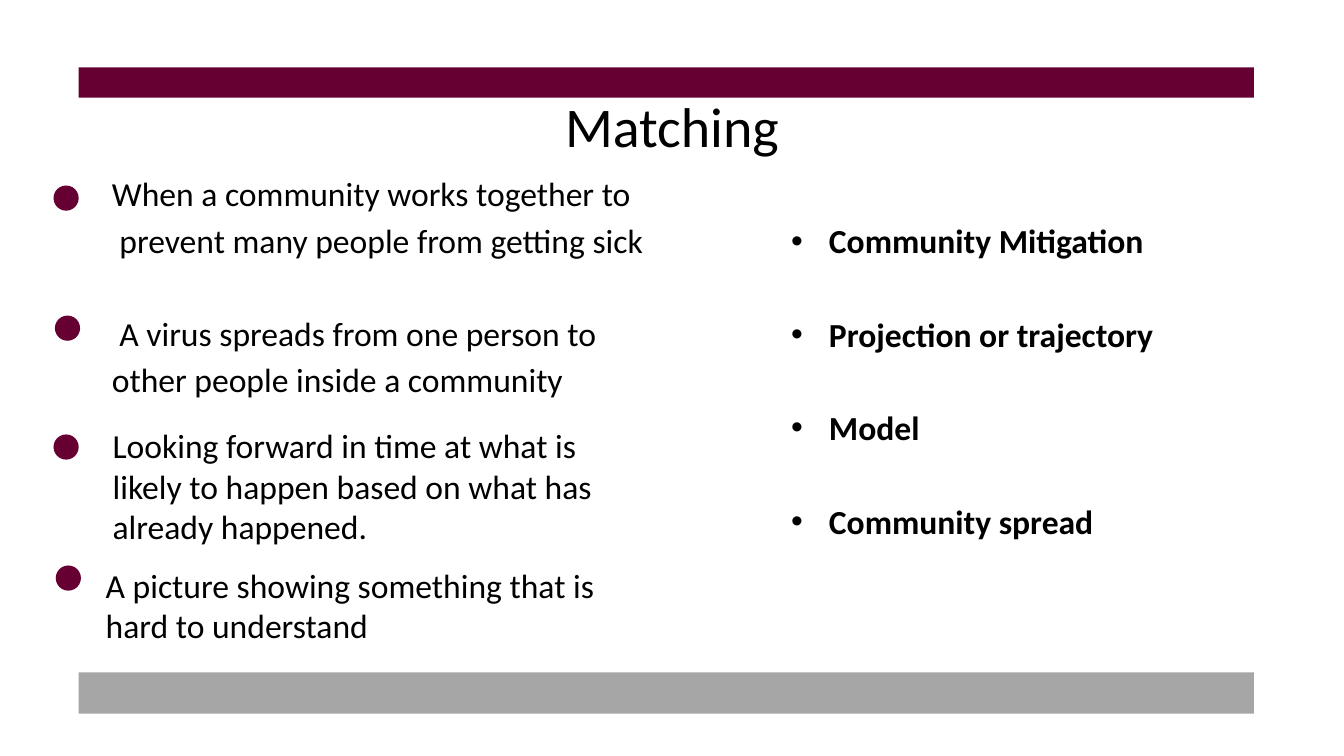
"""Build a matching exercise slide with definitions and terms."""
from dataclasses import dataclass

from lxml import etree
from pptx import Presentation
from pptx.dml.color import RGBColor
from pptx.enum.shapes import MSO_SHAPE
from pptx.enum.text import MSO_ANCHOR, PP_ALIGN
from pptx.oxml.ns import qn
from pptx.util import Pt

RECTANGLE = MSO_SHAPE.RECTANGLE
OVAL = MSO_SHAPE.OVAL
TOP = MSO_ANCHOR.TOP
MIDDLE = MSO_ANCHOR.MIDDLE
LEFT = PP_ALIGN.LEFT
CENTER = PP_ALIGN.CENTER


@dataclass(frozen=True)
class Theme:
    """Hold the colours, font and sizes of the slide."""
    font: str = "Calibri"
    title_size: float = 40
    body_size: float = 24
    text: RGBColor = RGBColor(0x00, 0x00, 0x00)
    accent: RGBColor = RGBColor(0x66, 0x00, 0x33)
    footer: RGBColor = RGBColor(0xA6, 0xA6, 0xA6)


class SlideBuilder:
    """Draw styled elements on one slide."""

    def __init__(self, slide, theme):
        """Keep the slide and its theme."""
        self.slide = slide
        self.theme = theme

    def shape(self, kind, left, top, width, height, color):
        """Add a filled shape without an outline."""
        shape = self.slide.shapes.add_shape(kind, Pt(left), Pt(top), Pt(width), Pt(height))
        shape.shadow.inherit = False
        shape.fill.solid()
        shape.fill.fore_color.rgb = color
        shape.line.fill.background()

    def text_box(self, left, top, width, height, anchor=TOP):
        """Add a wrapping text box and return its frame."""
        box = self.slide.shapes.add_textbox(Pt(left), Pt(top), Pt(width), Pt(height))
        frame = box.text_frame
        frame.word_wrap = True
        frame.vertical_anchor = anchor
        return frame

    def paragraph(self, frame, text, size, space=0, align=LEFT, bold=False):
        """Write a styled paragraph, filling the empty first one before adding more."""
        first = frame.paragraphs[0]
        paragraph = frame.add_paragraph() if first.runs else first
        paragraph.text = text
        paragraph.alignment = align
        paragraph.space_before = Pt(space)
        font = paragraph.font
        font.name = self.theme.font
        font.size = Pt(size)
        font.bold = bold
        font.color.rgb = self.theme.text
        return paragraph

    def indent(self, paragraph, margin, hanging=0, bullet=None):
        """Indent a paragraph and give it an optional bullet."""
        properties = paragraph._p.get_or_add_pPr()
        properties.set("marL", str(Pt(margin)))
        properties.set("indent", str(-Pt(hanging)))
        if bullet:
            face = etree.Element(qn("a:buFont"), typeface="Arial")
            mark = etree.Element(qn("a:buChar"), char=bullet)
            position = len(properties.findall(qn("a:spcBef")))
            properties.insert(position, face)
            properties.insert(position + 1, mark)


DEFINITION_LINES = [
    ("When a community works together to", 48.8, 0),
    ("prevent many people from getting sick", 54.2, 4.3),
    ("A virus spreads from one person to", 54.2, 37.9),
    ("other people inside a community", 48.8, 4.3),
]
DEFINITION_BOXES = [
    ("Looking forward in time at what is likely to happen based on what has already happened.",
     73.4, 300.2, 378.7, 94.3),
    ("A picture showing something that is hard to understand", 68.4, 399.6, 373.7, 65.5),
]
TERMS = ["Community Mitigation", "Projection or trajectory", "Model", "Community spread"]
TERM_GAP = 37.9
DOTS = [(38.2, 132.5), (39.2, 225.4), (38.2, 310.3), (39.8, 403.9)]
DOT_SIZE = 18


def main():
    """Compose and save the slide."""
    theme = Theme()
    deck = Presentation()
    deck.slide_width, deck.slide_height = Pt(960), Pt(540)
    page = SlideBuilder(deck.slides.add_slide(deck.slide_layouts[6]), theme)

    page.shape(RECTANGLE, 56.2, 480.2, 839.5, 29.5, theme.footer)
    page.shape(RECTANGLE, 56.2, 48.2, 839.5, 21.6, theme.accent)

    title = page.text_box(48, 47.5, 864, 83.5, MIDDLE)
    page.paragraph(title, "Matching", theme.title_size, align=CENTER)

    definitions = page.text_box(24, 120.2, 447.8, 362.2)
    for text, margin, space in DEFINITION_LINES:
        line = page.paragraph(definitions, text, theme.body_size, space)
        page.indent(line, margin)

    terms = page.text_box(558, 153.8, 354.2, 328.6)
    for index, text in enumerate(TERMS):
        space = TERM_GAP if index else 0
        term = page.paragraph(terms, text, theme.body_size, space, bold=True)
        page.indent(term, 27, 27, "•")

    for text, *bounds in DEFINITION_BOXES:
        page.paragraph(page.text_box(*bounds), text, theme.body_size)

    for left, top in DOTS:
        page.shape(OVAL, left, top, DOT_SIZE, DOT_SIZE, theme.accent)

    deck.save("out.pptx")


if __name__ == "__main__":
    main()
